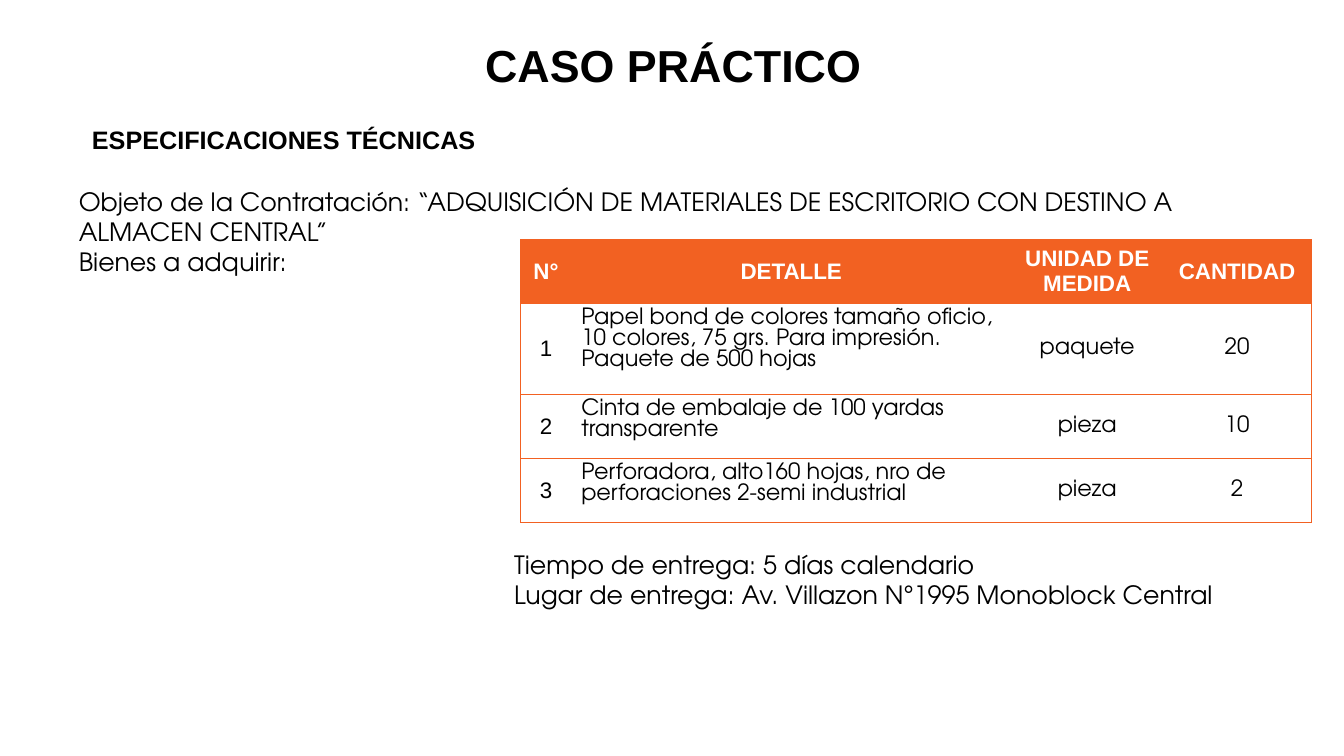
from lxml.etree import SubElement
from pptx import Presentation
from pptx.dml.color import RGBColor
from pptx.enum.text import MSO_ANCHOR, PP_ALIGN
from pptx.oxml.ns import qn
from pptx.util import Pt

BLACK = RGBColor(0, 0, 0)
WHITE = RGBColor(255, 255, 255)
ORANGE = RGBColor(0xF2, 0x61, 0x22)
SANS = "Arial"
ROUND = "TeX Gyre Adventor"
PLAIN = "{2D5ABB26-0587-4C30-8999-92F81FD0307C}"

HEADS = ["N°", "DETALLE", "UNIDAD DE MEDIDA", "CANTIDAD"]
GOODS = [
    ["1", "Papel bond de colores tamaño oficio, 10 colores, 75 grs. "
     "Para impresión. Paquete de 500 hojas", "paquete", "20"],
    ["2", "Cinta de embalaje de 100 yardas transparente", "pieza", "10"],
    ["3", "Perforadora, alto160 hojas, nro de perforaciones 2-semi industrial",
     "pieza", "2"],
]
WIDTHS = [36, 314.4, 108.5, 105.6]
HEIGHTS = [45.7, 65, 45.7, 45.7]


def style(frame, size, face, color=BLACK, bold=False, align=PP_ALIGN.LEFT):
    for para in frame.paragraphs:
        para.alignment = align
        for run in para.runs:
            run.font.size = Pt(size)
            run.font.name = face
            run.font.bold = bold
            run.font.color.rgb = color


def add_text(slide, box, lines, size, face, wrap=True, **look):
    frame = slide.shapes.add_textbox(*map(Pt, box)).text_frame
    frame.word_wrap = wrap
    frame.text = "\n".join(lines)
    style(frame, size, face, **look)
    return frame


def add_title(slide, box):
    frame = add_text(slide, box, ["CASO PRÁCTICO"], 32, SANS,
                     bold=True, align=PP_ALIGN.CENTER)
    frame.vertical_anchor = MSO_ANCHOR.MIDDLE
    frame.paragraphs[0].line_spacing = 0.9


def add_specs(slide, box):
    left, top, width, height = box
    add_text(slide, (left + 9.4, top - 43.9, 289, 29),
             ["ESPECIFICACIONES TÉCNICAS"], 18, SANS, wrap=False, bold=True)
    add_text(slide, (left, top, width, 72), [
        "Objeto de la Contratación: “ADQUISICIÓN DE MATERIALES DE ESCRITORIO "
        "CON DESTINO A ALMACEN CENTRAL”",
        "Bienes a adquirir:"], 18, ROUND)
    add_text(slide, (left + 311, top + height - 53, width - 311, 53), [
        "Tiempo de entrega: 5 días calendario",
        "Lugar de entrega: Av. Villazon N°1995 Monoblock Central"], 18, ROUND)


def add_edge(cell, side):
    line = SubElement(cell._tc.get_or_add_tcPr(), qn("a:ln" + side), w=str(Pt(0.5)))
    fill = SubElement(line, qn("a:solidFill"))
    SubElement(fill, qn("a:srgbClr"), val=str(ORANGE))


def add_goods(slide, left, top):
    rows = [HEADS] + GOODS
    frame = slide.shapes.add_table(len(rows), len(HEADS), Pt(left), Pt(top),
                                   Pt(sum(WIDTHS)), Pt(sum(HEIGHTS)))
    table = frame.table
    table.horz_banding = False
    table._tbl.tblPr.find(qn("a:tableStyleId")).text = PLAIN
    for col, width in zip(table.columns, WIDTHS):
        col.width = Pt(width)
    for r, row in enumerate(rows):
        table.rows[r].height = Pt(HEIGHTS[r])
        for c, text in enumerate(row):
            cell = table.cell(r, c)
            head, detail = r == 0, r > 0 and c == 1
            cell.text_frame.text = text
            style(cell.text_frame, 16, SANS if head or c == 0 else ROUND,
                  color=WHITE if head else BLACK, bold=head,
                  align=PP_ALIGN.LEFT if detail else PP_ALIGN.CENTER)
            cell.vertical_anchor = MSO_ANCHOR.TOP if detail else MSO_ANCHOR.MIDDLE
            sides = {0: "L", len(HEADS) - 1: "R"}.get(c, "") + "TB"
            for side in sides:
                add_edge(cell, side)
            if head:
                cell.fill.solid()
                cell.fill.fore_color.rgb = ORANGE
            else:
                cell.fill.background()


def main():
    deck = Presentation()
    deck.slide_width, deck.slide_height = Pt(960), Pt(540)
    slide = deck.slides.add_slide(deck.slide_layouts[6])
    add_title(slide, (25.2, 26, 911.5, 44.6))
    add_specs(slide, (49.2, 129.4, 878.4, 312.3))
    add_goods(slide, 372, 171)
    deck.save("out.pptx")


if __name__ == "__main__":
    main()
